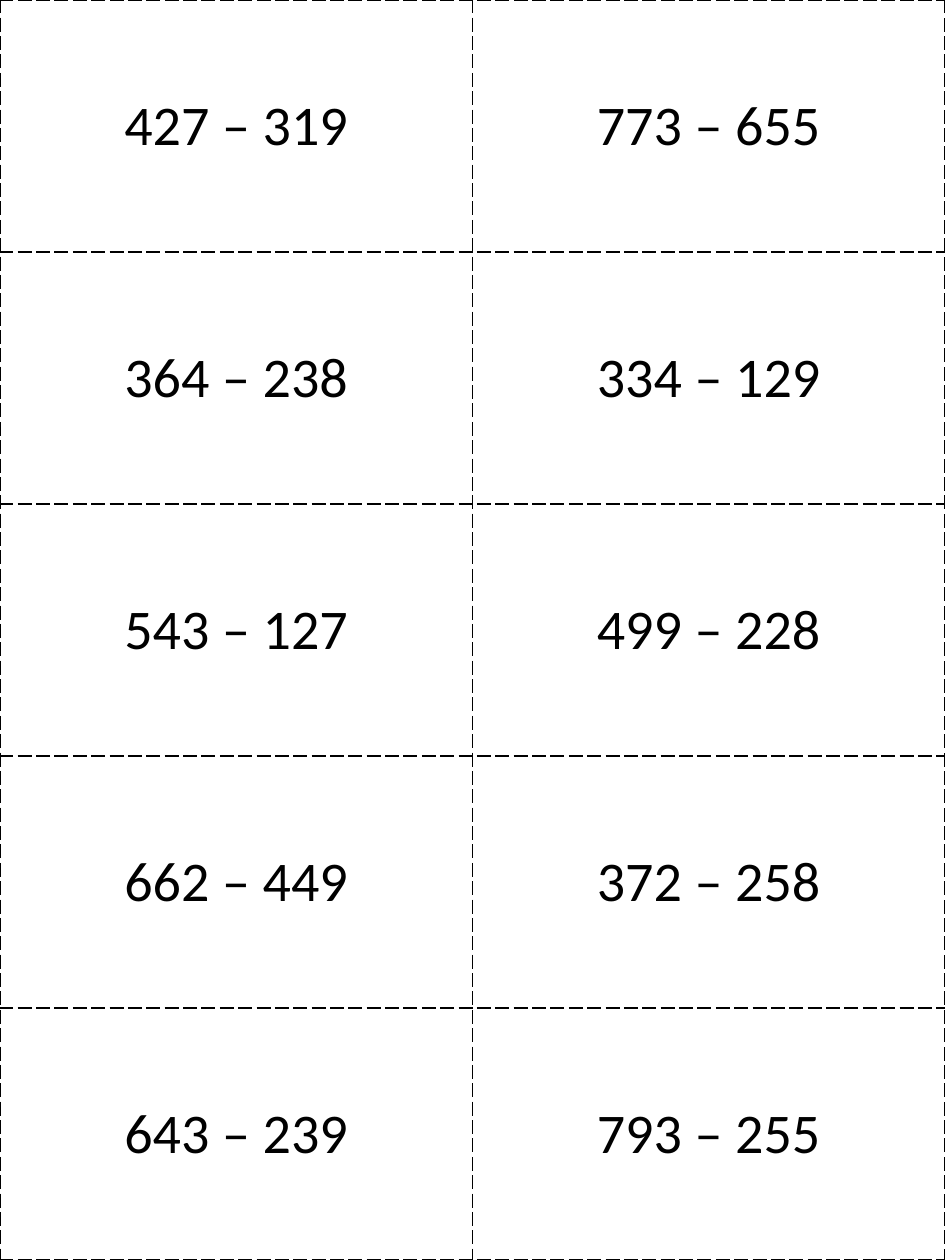
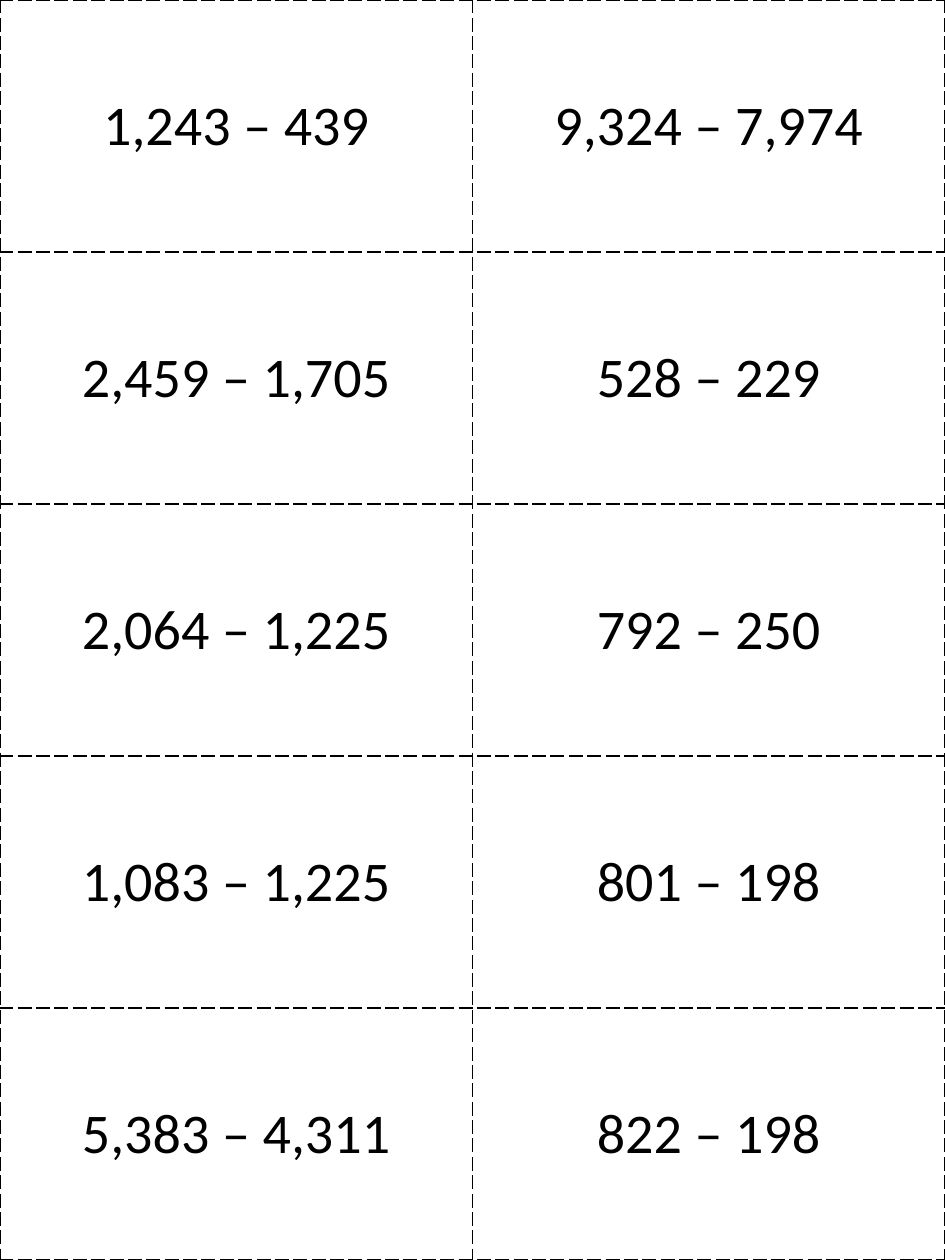
from lxml import etree
from pptx import Presentation
from pptx.dml.color import RGBColor
from pptx.enum.text import MSO_ANCHOR, PP_ALIGN
from pptx.oxml.ns import qn
from pptx.util import Emu, Pt

CARD_SHEETS = [
    [
        ("427 – 319", "773 – 655"),
        ("364 – 238", "334 – 129"),
        ("543 – 127", "499 – 228"),
        ("662 – 449", "372 – 258"),
        ("643 – 239", "793 – 255"),
    ],
    [
        ("1,243 – 439", "9,324 – 7,974"),
        ("2,459 – 1,705", "528 – 229"),
        ("2,064 – 1,225", "792 – 250"),
        ("1,083 – 1,225", "801 – 198"),
        ("5,383 – 4,311", "822 – 198"),
    ],
]

PX_PER_INCH = 126
SLIDE_W, SLIDE_H = 945, 1260
FONT, FONT_SIZE = "Calibri", Pt(32)
INK = "000000"
CUT_WIDTH, CUT_DASH = Pt(1), "lgDash"
BLANK_LAYOUT = 6
CENTER, MIDDLE = PP_ALIGN.CENTER, MSO_ANCHOR.MIDDLE


def px(n):
    return Emu(round(n * 914400 / PX_PER_INCH))


def color(hex_string):
    return RGBColor.from_string(hex_string)


def add_cut_lines(cell):
    """Draw a dashed border on all four sides of the cell."""
    tc_pr = cell._tc.get_or_add_tcPr()
    for side in ("a:lnL", "a:lnR", "a:lnT", "a:lnB"):
        ln = etree.SubElement(tc_pr, qn(side), w=str(CUT_WIDTH))
        fill = etree.SubElement(ln, qn("a:solidFill"))
        etree.SubElement(fill, qn("a:srgbClr"), val=INK)
        etree.SubElement(ln, qn("a:prstDash"), val=CUT_DASH)


def fill_card(cell, problem):
    add_cut_lines(cell)
    cell.fill.background()
    cell.vertical_anchor = MIDDLE
    p = cell.text_frame.paragraphs[0]
    p.text = problem
    p.alignment = CENTER
    font = p.runs[0].font
    font.name, font.size = FONT, FONT_SIZE
    font.color.rgb = color(INK)


def add_card_sheet(prs, cards):
    slide = prs.slides.add_slide(prs.slide_layouts[BLANK_LAYOUT])
    table = slide.shapes.add_table(
        len(cards), len(cards[0]), 0, 0, prs.slide_width, prs.slide_height
    ).table
    table.first_row = table.horz_banding = False
    for r, row in enumerate(cards):
        for c, problem in enumerate(row):
            fill_card(table.cell(r, c), problem)


def main():
    prs = Presentation()
    prs.slide_width, prs.slide_height = px(SLIDE_W), px(SLIDE_H)
    for cards in CARD_SHEETS:
        add_card_sheet(prs, cards)
    prs.save("out.pptx")


if __name__ == "__main__":
    main()
